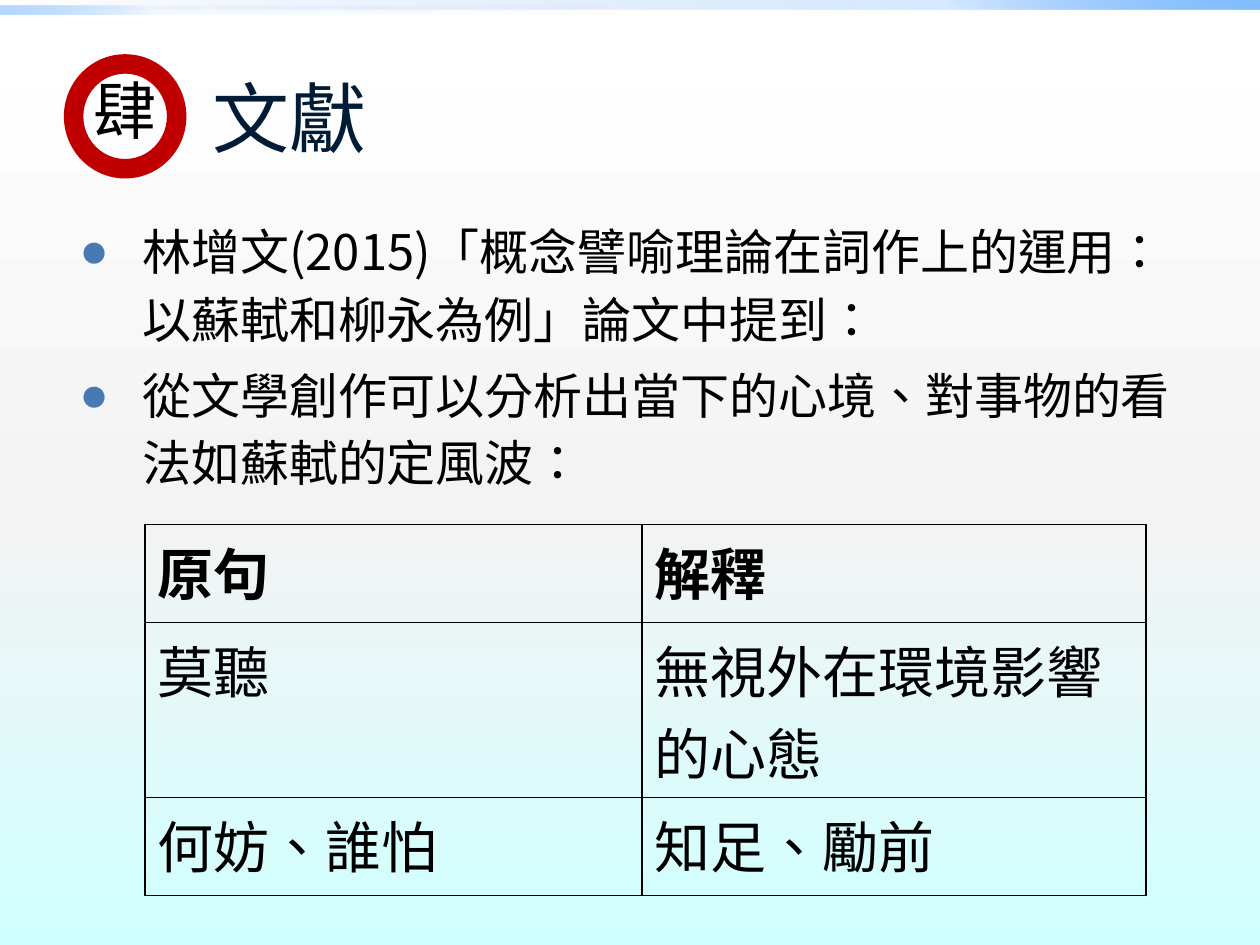
from dataclasses import dataclass

from lxml import etree
from pptx import Presentation
from pptx.dml.color import RGBColor
from pptx.enum.shapes import MSO_SHAPE
from pptx.enum.text import MSO_ANCHOR
from pptx.oxml.ns import qn
from pptx.util import Pt

RECTANGLE, DONUT = MSO_SHAPE.RECTANGLE, MSO_SHAPE.DONUT
TOP, MIDDLE = MSO_ANCHOR.TOP, MSO_ANCHOR.MIDDLE


@dataclass(frozen=True)
class Theme:
    """Fonts, colours and type sizes of the slide."""
    font: str = "Noto Sans CJK SC"
    bullet_font: str = "Arial"
    language: str = "zh-TW"
    ink: str = "000000"
    title_ink: str = "001B36"
    bullet: str = "477AB1"
    ring: str = "C00000"
    title_size: int = 44
    badge_size: int = 36
    table_size: int = 32
    body_size: int = 28
    backdrop: tuple = ((0, "FFFFFF", 100), (55, "F3F3F3", 100), (100, "D0FFFF", 100))
    upper_band: tuple = ((0, "0058BC", 0), (75, "3492FF", 20), (100, "82BEFF", 100))
    lower_band: tuple = ((0, "0058BC", 0), (75, "3492FF", 5), (100, "82BEFF", 60))


def add_child(parent, tag, **attributes):
    """Append a DrawingML element to a parent."""
    return etree.SubElement(parent, qn(tag), attributes)


class SlideBuilder:
    """Draws styled elements on the current slide."""

    def __init__(self, page, theme):
        self.page = page
        self.theme = theme

    def gradient(self, fill, holder, stops, angle):
        """Replace a fill with a linear gradient."""
        fill.solid()
        solid = holder.find(qn("a:solidFill"))
        gradient = etree.Element(qn("a:gradFill"), rotWithShape="1")
        stop_list = add_child(gradient, "a:gsLst")
        for position, color, opacity in stops:
            stop = add_child(stop_list, "a:gs", pos=str(position * 1000))
            tint = add_child(stop, "a:srgbClr", val=color)
            if opacity < 100:
                add_child(tint, "a:alpha", val=str(opacity * 1000))
        add_child(gradient, "a:lin", ang=str(angle * 60000), scaled="0")
        holder.replace(solid, gradient)

    def backdrop(self):
        """Fill the slide background."""
        fill = self.page.background.fill
        fill.solid()
        holder = self.page.element.find(".//" + qn("p:bgPr"))
        self.gradient(fill, holder, self.theme.backdrop, 90)

    def band(self, bounds, stops, angle):
        """Add a translucent decorative band."""
        shape = self.page.shapes.add_shape(RECTANGLE, *map(Pt, bounds))
        shape.shadow.inherit = False
        shape.line.fill.background()
        self.gradient(shape.fill, shape.element.spPr, stops, angle)

    def style(self, para, size, color, bold=False):
        """Set the font and language of a paragraph."""
        font = para.font
        font.size, font.bold, font.name = Pt(size), bold, self.theme.font
        font.color.rgb = RGBColor.from_string(color)
        defaults = para._p.pPr.find(qn("a:defRPr"))
        add_child(defaults, "a:ea", typeface=self.theme.font)
        for span in para.runs:
            span._r.get_or_add_rPr().set("lang", self.theme.language)

    def text(self, shapes, bounds, words, size, color, anchor=TOP):
        """Add a one-line text box."""
        box = shapes.add_textbox(*map(Pt, bounds))
        frame = box.text_frame
        frame.word_wrap = True
        frame.vertical_anchor = anchor
        frame.text = words
        self.style(frame.paragraphs[0], size, color)

    def badge(self, ring_bounds, text_bounds, words):
        """Add a grouped ring with a numeral inside."""
        shapes = self.page.shapes.add_group_shape().shapes
        ring = shapes.add_shape(DONUT, *map(Pt, ring_bounds))
        ring.shadow.inherit = False
        ring.adjustments[0] = 0.134
        color = RGBColor.from_string(self.theme.ring)
        ring.fill.solid()
        ring.fill.fore_color.rgb = color
        ring.line.color.rgb = color
        ring.line.width = Pt(2)
        self.text(shapes, text_bounds, words, self.theme.badge_size, self.theme.ink)

    def bullets(self, bounds, items):
        """Add a bulleted list with hanging indents."""
        frame = self.page.shapes.add_textbox(*map(Pt, bounds)).text_frame
        frame.word_wrap = True
        for index, words in enumerate(items):
            para = frame.add_paragraph() if index else frame.paragraphs[0]
            para.text = words
            para.line_spacing = 1.15
            if index:
                para.space_before = Pt(4.8)
            properties = para._p.get_or_add_pPr()
            properties.set("marL", str(Pt(36)))
            properties.set("indent", str(Pt(-36)))
            bullet_color = add_child(properties, "a:buClr")
            add_child(bullet_color, "a:srgbClr", val=self.theme.bullet)
            add_child(properties, "a:buFont", typeface=self.theme.bullet_font)
            add_child(properties, "a:buChar", char="●")
            self.style(para, self.theme.body_size, self.theme.ink)

    def border(self, cell):
        """Outline a cell on all four sides."""
        properties = cell._tc.get_or_add_tcPr()
        for index, side in enumerate(("a:lnL", "a:lnR", "a:lnT", "a:lnB")):
            line = etree.Element(qn(side), w=str(Pt(1)))
            paint = add_child(line, "a:solidFill")
            add_child(paint, "a:srgbClr", val=self.theme.ink)
            properties.insert(index, line)

    def table(self, left, top, widths, heights, rows):
        """Add a ruled table with a bold header row."""
        bounds = (left, top, sum(widths), sum(heights))
        frame = self.page.shapes.add_table(len(rows), len(widths), *map(Pt, bounds))
        table = frame.table
        table.horz_banding = False
        for column, width in zip(table.columns, widths):
            column.width = Pt(width)
        for row, height in zip(table.rows, heights):
            row.height = Pt(height)
        for row_index, row in enumerate(rows):
            for column_index, words in enumerate(row):
                cell = table.cell(row_index, column_index)
                cell.text = words
                cell.fill.background()
                self.border(cell)
                self.style(cell.text_frame.paragraphs[0], self.theme.table_size,
                           self.theme.ink, bold=row_index == 0)


def main():
    """Build the literature slide."""
    deck = Presentation()
    deck.slide_width, deck.slide_height = Pt(720), Pt(540)
    page = deck.slides.add_slide(deck.slide_layouts[6])
    theme = Theme()
    builder = SlideBuilder(page, theme)
    builder.backdrop()
    builder.band((0, 0, 720, 5.5), theme.upper_band, 315)
    builder.band((0, 3, 360, 5.5), theme.lower_band, 135)
    builder.bullets((38.3, 118, 657, 391), (
        "林增文(2015)「概念譬喻理論在詞作上的運用：以蘇軾和柳永為例」論文中提到：",
        "從文學創作可以分析出當下的心境、對事物的看法如蘇軾的定風波：",
    ))
    builder.text(page.shapes, (114.5, 21.5, 112, 90), "文獻",
                 theme.title_size, theme.title_ink, MIDDLE)
    builder.badge((37.5, 32, 68, 69), (46.5, 37.5, 48, 51), "肆")
    builder.table(82.8, 299.7, (284, 288), (56, 100, 56), (
        ("原句", "解釋"),
        ("莫聽", "無視外在環境影響的心態"),
        ("何妨、誰怕", "知足、勵前"),
    ))
    deck.save("out.pptx")


if __name__ == "__main__":
    main()
